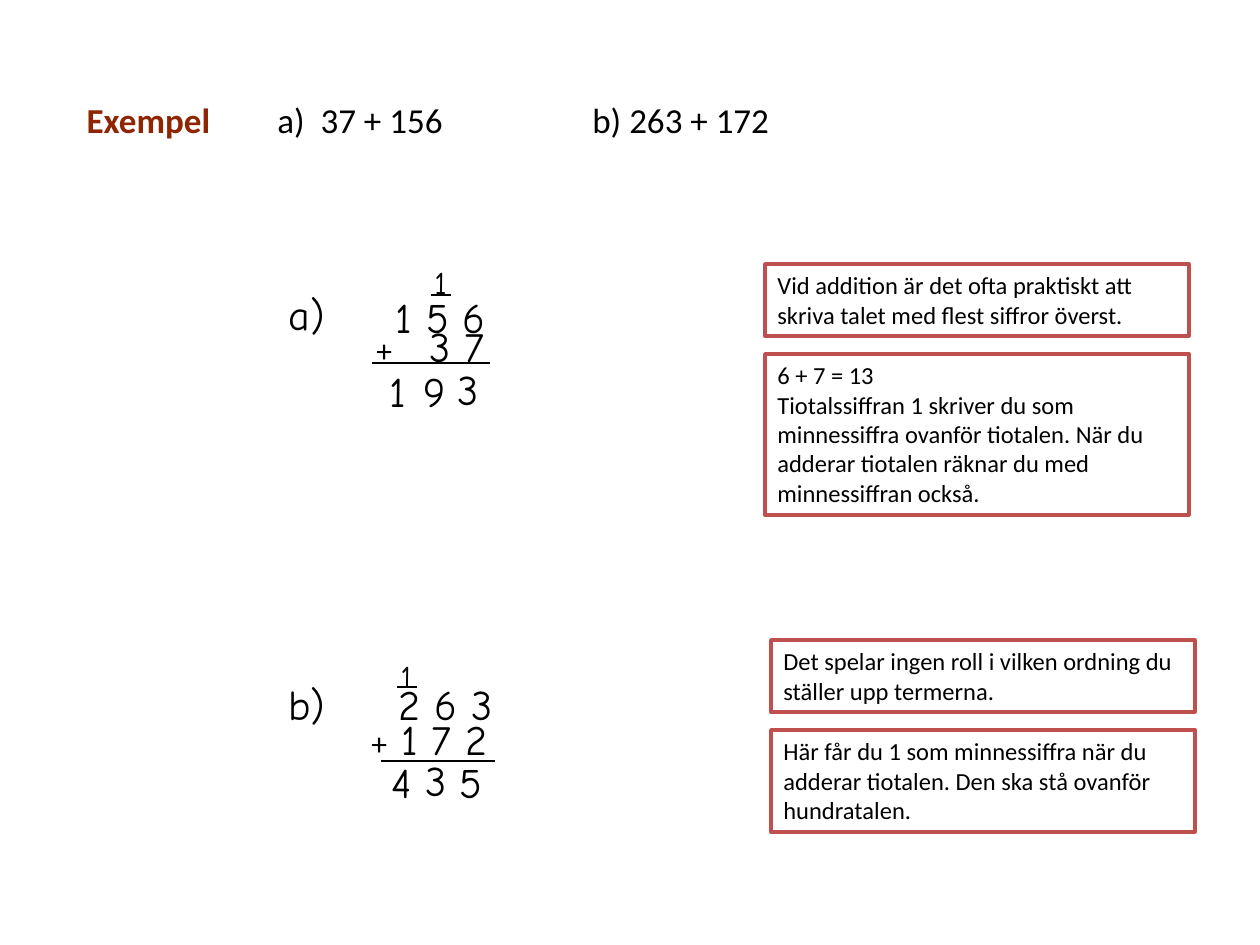
from pptx import Presentation
from pptx.dml.color import RGBColor
from pptx.enum.shapes import MSO_CONNECTOR as Connector, MSO_SHAPE as Preset
from pptx.enum.text import MSO_ANCHOR as Anchor, PP_ALIGN as Align
from pptx.oxml.ns import qn
from pptx.util import Pt
from lxml.etree import SubElement

BLACK = RGBColor(0x00, 0x00, 0x00)
WHITE = RGBColor(0xFF, 0xFF, 0xFF)
BROWN = RGBColor(0x8E, 0x25, 0x03)
RED = RGBColor(0xC0, 0x50, 0x4D)
PRINT, HAND = "Calibri", "Comic Neue"
TITLE_ONLY = 5


def px(length):
    """Turn pixels, 126 to the inch, into EMU."""
    return round(length * 914400 / 126)


class SlideBuilder:
    def __init__(self, slide):
        self.slide = slide

    def format_run(self, run, size, font, color=BLACK, bold=False):
        run.font.size = Pt(size)
        run.font.name = font
        run.font.color.rgb = color
        run.font.bold = bold

    def format_frame(self, shape, size, font, color=BLACK, bold=False):
        frame = shape.text_frame
        frame.word_wrap = True
        frame.vertical_anchor = Anchor.TOP
        for paragraph in frame.paragraphs:
            paragraph.alignment = Align.LEFT
            for run in paragraph.runs:
                self.format_run(run, size, font, color, bold)

    def title(self, text, left, top, width, height):
        shape = self.slide.shapes.title
        shape.left, shape.top = px(left), px(top)
        shape.width, shape.height = px(width), px(height)
        shape.text_frame.text = text
        self.format_frame(shape, 20, PRINT, BROWN, True)
        shape.text_frame.word_wrap = False

    def text(self, text, left, top, width, height=63, size=24, font=HAND, tab=None):
        box = self.slide.shapes.add_textbox(px(left), px(top), px(width), px(height))
        box.text_frame.text = text
        self.format_frame(box, size, font)
        if tab:
            properties = box.text_frame.paragraphs[0]._p.get_or_add_pPr()
            stops = SubElement(properties, qn("a:tabLst"))
            SubElement(stops, qn("a:tab"), pos=str(px(tab)), algn="l")
        return box

    def plus_row(self, digits, left, top, tab=None):
        box = self.text("+", left, top, 228, size=18, font=PRINT, tab=tab)
        run = box.text_frame.paragraphs[0].add_run()
        run.text = digits
        self.format_run(run, 24, HAND)

    def line(self, left, right, y, weight):
        line = self.slide.shapes.add_connector(
            Connector.STRAIGHT, px(left), px(y), px(right), px(y))
        line.line.color.rgb = BLACK
        line.line.width = Pt(weight)
        SubElement(line._element.spPr, qn("a:effectLst"))

    def note(self, text, left, top, height):
        shape = self.slide.shapes.add_shape(
            Preset.RECTANGLE, px(left), px(top), px(424), px(height))
        shape.shadow.inherit = False
        shape.fill.solid()
        shape.fill.fore_color.rgb = WHITE
        shape.line.color.rgb = RED
        shape.line.width = Pt(2)
        shape.text_frame.text = text
        self.format_frame(shape, 14, PRINT)

    def carry(self, left, top, line_y):
        self.line(left + 9, left + 29, line_y, 0.75)
        self.text("1", left, top, 30, 50, size=18)

    def answer(self, digits, left, tops):
        for column, (digit, top) in enumerate(zip(digits, tops)):
            self.text(digit, left + 34 * column, top, 37)


def main():
    presentation = Presentation()
    presentation.slide_width, presentation.slide_height = px(1260), px(945)
    layout = presentation.slide_layouts[TITLE_ONLY]
    builder = SlideBuilder(presentation.slides.add_slide(layout))

    # Heading and the two tasks
    builder.title("Exempel", 74, 92, 150, 55)
    builder.text("a)  37 + 156\tb) 263 + 172", 265, 92, 856, 55,
                 size=20, font=PRINT, tab=315)

    # Sum a
    builder.text("a)", 276, 282, 68)
    builder.text("1 5 6", 383, 285, 144)
    builder.plus_row("\t3 7", 364, 314, tab=53)
    builder.line(372, 490, 363, 1.25)
    builder.carry(422, 257, 295)
    builder.answer("193", 377, (359, 359, 357))

    # Sum b
    builder.text("b)", 276, 672, 68)
    builder.text("2 6 3", 386, 672, 131)
    builder.plus_row(" 1 7 2", 359, 707)
    builder.line(381, 495, 761, 1.25)
    builder.carry(388, 651, 687)
    builder.answer("435", 379, (750, 748, 750))

    # Explanations
    notes = [
        ("Vid addition är det ofta praktiskt att skriva talet med flest "
         "siffror överst.", 765, 264, 72),
        ("6 + 7 = 13\nTiotalssiffran 1 skriver du som minnessiffra ovanför "
         "tiotalen. När du adderar tiotalen räknar du med minnessiffran "
         "också.", 765, 354, 161),
        ("Det spelar ingen roll i vilken ordning du ställer upp termerna.",
         771, 640, 72),
        ("Här får du 1 som minnessiffra när du adderar tiotalen. Den ska stå "
         "ovanför hundratalen.", 771, 730, 102),
    ]
    for note in notes:
        builder.note(*note)

    presentation.save("out.pptx")


if __name__ == "__main__":
    main()
